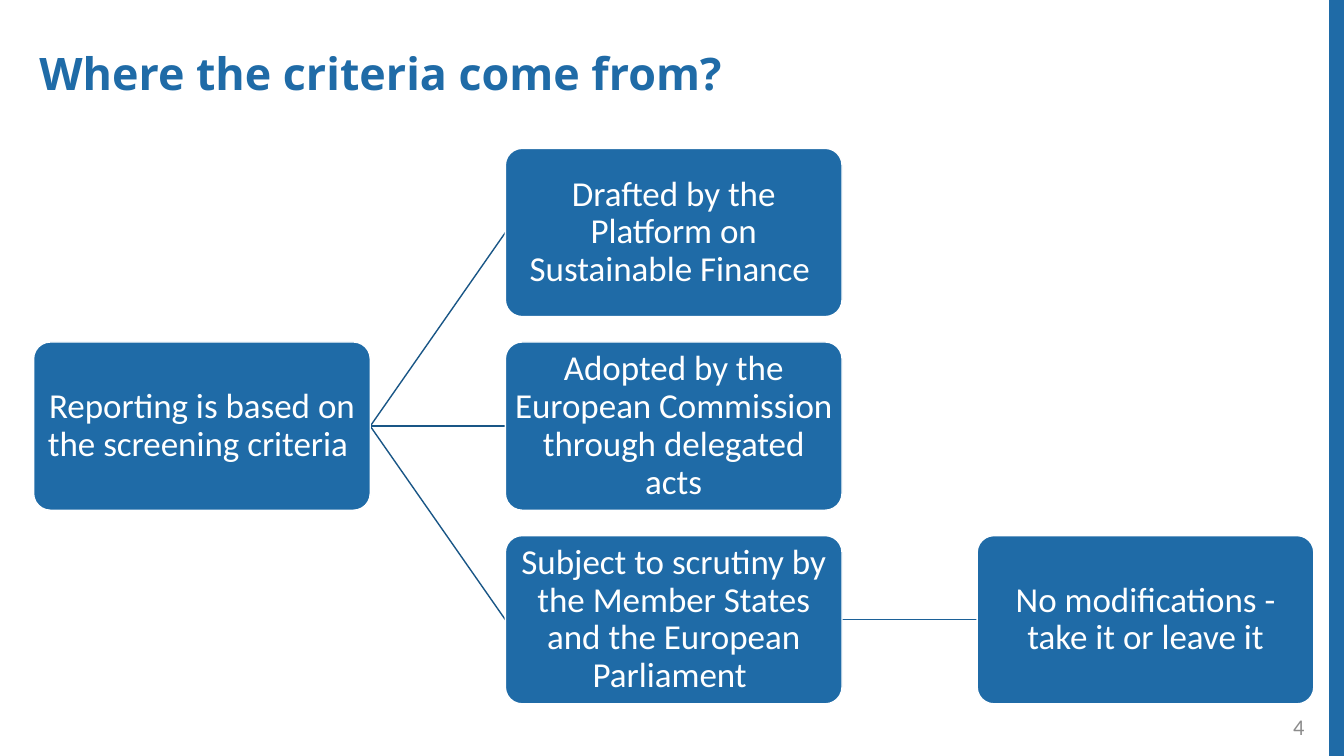
from dataclasses import dataclass

from lxml import etree
from pptx import Presentation
from pptx.dml.color import RGBColor
from pptx.enum.shapes import MSO_CONNECTOR, MSO_SHAPE
from pptx.enum.text import MSO_ANCHOR, MSO_AUTO_SIZE, PP_ALIGN
from pptx.oxml.ns import qn
from pptx.util import Pt

STRAIGHT = MSO_CONNECTOR.STRAIGHT
ROUNDED = MSO_SHAPE.ROUNDED_RECTANGLE
TOP, MIDDLE = MSO_ANCHOR.TOP, MSO_ANCHOR.MIDDLE
LEFT, CENTER, RIGHT = PP_ALIGN.LEFT, PP_ALIGN.CENTER, PP_ALIGN.RIGHT
NO_AUTOFIT = MSO_AUTO_SIZE.NONE


@dataclass(frozen=True)
class Theme:
    blue: str = "1F6BA7"
    branch: str = "195686"
    leaf_branch: str = "1C6198"
    white: str = "FFFFFF"
    grey: str = "8C8C8C"
    title_font: str = "Open Sans"
    body_font: str = "Calibri"
    title_size: float = 32
    box_size: float = 25
    number_size: float = 16


theme = Theme()


def write_text(shape, text, *, size, color, font=theme.body_font, bold=False,
               align=LEFT, anchor=MIDDLE, spacing=1.0, inset=(7.2, 3.6)):
    frame = shape.text_frame
    frame.word_wrap = True
    frame.auto_size = NO_AUTOFIT
    frame.vertical_anchor = anchor
    frame.margin_left = frame.margin_right = Pt(inset[0])
    frame.margin_top = frame.margin_bottom = Pt(inset[1])
    paragraph = frame.paragraphs[0]
    paragraph.alignment = align
    paragraph.line_spacing = spacing
    paragraph.space_before = Pt(0)
    run = paragraph.add_run()
    run.text = text
    run.font.name = font
    run.font.size = Pt(size)
    run.font.bold = bold
    run.font.color.rgb = RGBColor.from_string(color)


def add_line(start, end, color, width=1):
    line = slide.shapes.add_connector(STRAIGHT, *map(Pt, start + end))
    line.line.color.rgb = RGBColor.from_string(color)
    line.line.width = Pt(width)
    etree.SubElement(line._element.spPr, qn("a:effectLst"))


presentation = Presentation()
presentation.slide_width, presentation.slide_height = Pt(960), Pt(540)
slide = presentation.slides.add_slide(presentation.slide_layouts[5])

# Stripe on the right edge
add_line((955.4, 0), (955.4, 540), theme.blue, width=12)

# Title
title = slide.shapes.title
title.left, title.top, title.width, title.height = map(Pt, (20.9, 33.1, 861, 41.8))
write_text(title, "Where the criteria come from?", size=theme.title_size,
           color=theme.blue, font=theme.title_font, bold=True, anchor=TOP, spacing=0.9)

# Tree grid: column and row of each box
GRID_LEFT, GRID_TOP = 24, 106
COLUMN_STEP, ROW_STEP = 337, 138.3
BOX_WIDTH, BOX_HEIGHT = 240.5, 120.2
boxes = {
    "criteria": (0, 1, "Reporting is based on the screening criteria "),
    "drafted": (1, 0, "Drafted by the Platform on Sustainable Finance "),
    "adopted": (1, 1, "Adopted by the European Commission through delegated acts"),
    "scrutiny": (1, 2, "Subject to scrutiny by the Member States and the European Parliament "),
    "outcome": (2, 2, "No modifications - take it or leave it"),
}
branches = [
    ("criteria", "drafted", theme.branch),
    ("criteria", "adopted", theme.branch),
    ("criteria", "scrutiny", theme.branch),
    ("scrutiny", "outcome", theme.leaf_branch),
]

# Branches, from the right side of the parent to the left side of the child
for parent, child, color in branches:
    (parent_column, parent_row, _), (child_column, child_row, _) = boxes[parent], boxes[child]
    middle = GRID_TOP + BOX_HEIGHT / 2
    start = (GRID_LEFT + parent_column * COLUMN_STEP + BOX_WIDTH, middle + parent_row * ROW_STEP)
    end = (GRID_LEFT + child_column * COLUMN_STEP, middle + child_row * ROW_STEP)
    add_line(start, end, color)

# Boxes
for column, row, text in boxes.values():
    box = slide.shapes.add_shape(
        ROUNDED, Pt(GRID_LEFT + column * COLUMN_STEP), Pt(GRID_TOP + row * ROW_STEP),
        Pt(BOX_WIDTH), Pt(BOX_HEIGHT))
    box.adjustments[0] = 0.1
    box.shadow.inherit = False
    box.fill.solid()
    box.fill.fore_color.rgb = RGBColor.from_string(theme.blue)
    box.line.color.rgb = RGBColor.from_string(theme.white)
    box.line.width = Pt(1)
    write_text(box, text, size=theme.box_size, color=theme.white,
               align=CENTER, spacing=0.9, inset=(1.5, 1.5))

# Slide number
number = slide.shapes.add_textbox(Pt(722.9), Pt(504.7), Pt(216), Pt(28.8))
write_text(number, "4", size=theme.number_size, color=theme.grey, align=RIGHT)

presentation.save("out.pptx")
